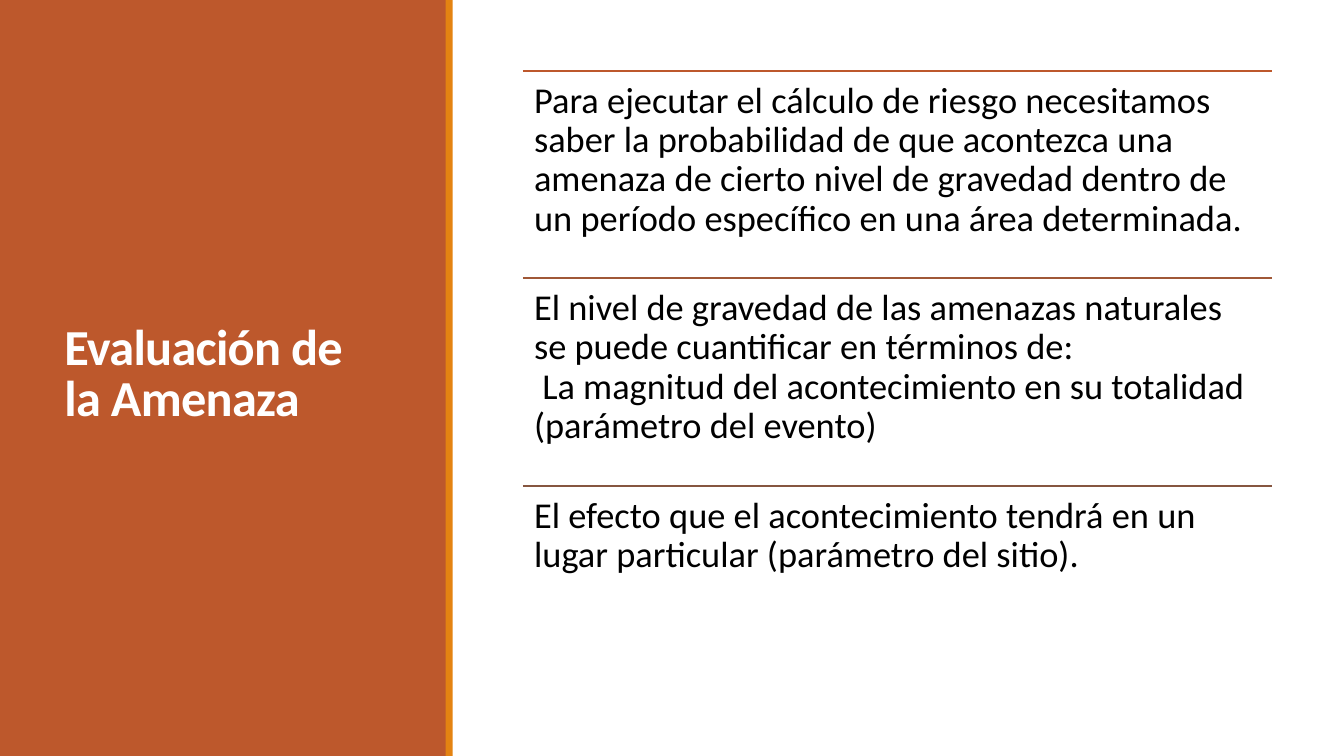
from pptx import Presentation
from pptx.dml.color import RGBColor
from pptx.enum.shapes import MSO_CONNECTOR, MSO_SHAPE
from pptx.enum.text import MSO_ANCHOR, MSO_AUTO_SIZE, PP_ALIGN
from pptx.oxml.ns import qn
from pptx.util import Cm, Pt
from lxml.etree import SubElement

TITLE = "Evaluación de la Amenaza"
POINTS = [
    ("Para ejecutar el cálculo de riesgo necesitamos saber la probabilidad de que "
     "acontezca una amenaza de cierto nivel de gravedad dentro de un período "
     "específico en una área determinada.", "first_rule"),
    ("El nivel de gravedad de las amenazas naturales se puede cuantificar en "
     "términos de:\v La magnitud del acontecimiento en su totalidad "
     "(parámetro del evento)", "second_rule"),
    ("El efecto que el acontecimiento tendrá en un lugar particular "
     "(parámetro del sitio).", "third_rule"),
]
COLORS = {
    "panel": "BD582C",
    "stripe": "E48312",
    "title": "FFFFFF",
    "text": "000000",
    "first_rule": "BD582C",
    "second_rule": "A05837",
    "third_rule": "865640",
}
SLIDE_WIDTH, SLIDE_HEIGHT = Cm(33.87), Cm(19.05)
BANDS = [("panel", Cm(0), Cm(11.25)), ("stripe", Cm(11.23), Cm(0.18))]
TITLE_BOX = {"left": Cm(1.37), "top": Cm(1.45), "width": Cm(8.56), "height": Cm(16.03)}
LIST_LEFT, LIST_TOP, LIST_WIDTH, ROW_HEIGHT = Cm(13.18), Cm(1.78), Cm(18.87), Cm(5.23)
INSET = Cm(0.28)

TITLE_FRAME = {"word_wrap": True, "auto_size": MSO_AUTO_SIZE.NONE,
               "vertical_anchor": MSO_ANCHOR.MIDDLE}
POINT_FRAME = {"word_wrap": True, "auto_size": MSO_AUTO_SIZE.NONE,
               "vertical_anchor": MSO_ANCHOR.TOP,
               "margin_left": INSET, "margin_top": INSET,
               "margin_right": INSET, "margin_bottom": INSET}
TITLE_PARAGRAPH = {"alignment": PP_ALIGN.LEFT, "line_spacing": 0.85}
POINT_PARAGRAPH = {"alignment": PP_ALIGN.LEFT, "line_spacing": 0.9}
TITLE_FONT = {"name": "Calibri", "size": Pt(36), "bold": True}
POINT_FONT = {"name": "Calibri", "size": Pt(26), "bold": False}


def color(name):
    return RGBColor.from_string(COLORS[name])


def apply(target, values):
    for name, value in values.items():
        setattr(target, name, value)


def write(shape, text, color_name, frame_format, paragraph_format, font_format):
    frame = shape.text_frame
    apply(frame, frame_format)
    paragraph = frame.paragraphs[0]
    paragraph.text = text
    apply(paragraph, paragraph_format)
    for run in paragraph.runs:
        apply(run.font, font_format)
        run.font.color.rgb = color(color_name)
    return paragraph


def add_band(slide, name, left, width):
    band = slide.shapes.add_shape(MSO_SHAPE.RECTANGLE, left, 0, width, SLIDE_HEIGHT)
    band.shadow.inherit = False
    band.fill.solid()
    band.fill.fore_color.rgb = color(name)
    band.line.fill.background()


def place_title(slide):
    title = slide.shapes.title
    apply(title, TITLE_BOX)
    paragraph = write(title, TITLE, "title", TITLE_FRAME, TITLE_PARAGRAPH, TITLE_FONT)
    for run in paragraph.runs:
        run.font._element.set("spc", "-50")
    title.element.getparent().append(title.element)


def add_point(slide, index, text, rule_name):
    top = LIST_TOP + index * ROW_HEIGHT
    rule = slide.shapes.add_connector(
        MSO_CONNECTOR.STRAIGHT, LIST_LEFT, top, LIST_LEFT + LIST_WIDTH, top)
    rule.line.color.rgb = color(rule_name)
    rule.line.width = Pt(1.25)
    SubElement(rule.element.spPr, qn("a:effectLst"))
    box = slide.shapes.add_textbox(LIST_LEFT, top, LIST_WIDTH, ROW_HEIGHT)
    write(box, text, "text", POINT_FRAME, POINT_PARAGRAPH, POINT_FONT)


def main():
    presentation = Presentation()
    presentation.slide_width, presentation.slide_height = SLIDE_WIDTH, SLIDE_HEIGHT
    slide = presentation.slides.add_slide(presentation.slide_layouts[5])
    for band in BANDS:
        add_band(slide, *band)
    place_title(slide)
    for index, point in enumerate(POINTS):
        add_point(slide, index, *point)
    presentation.save("out.pptx")


if __name__ == "__main__":
    main()
